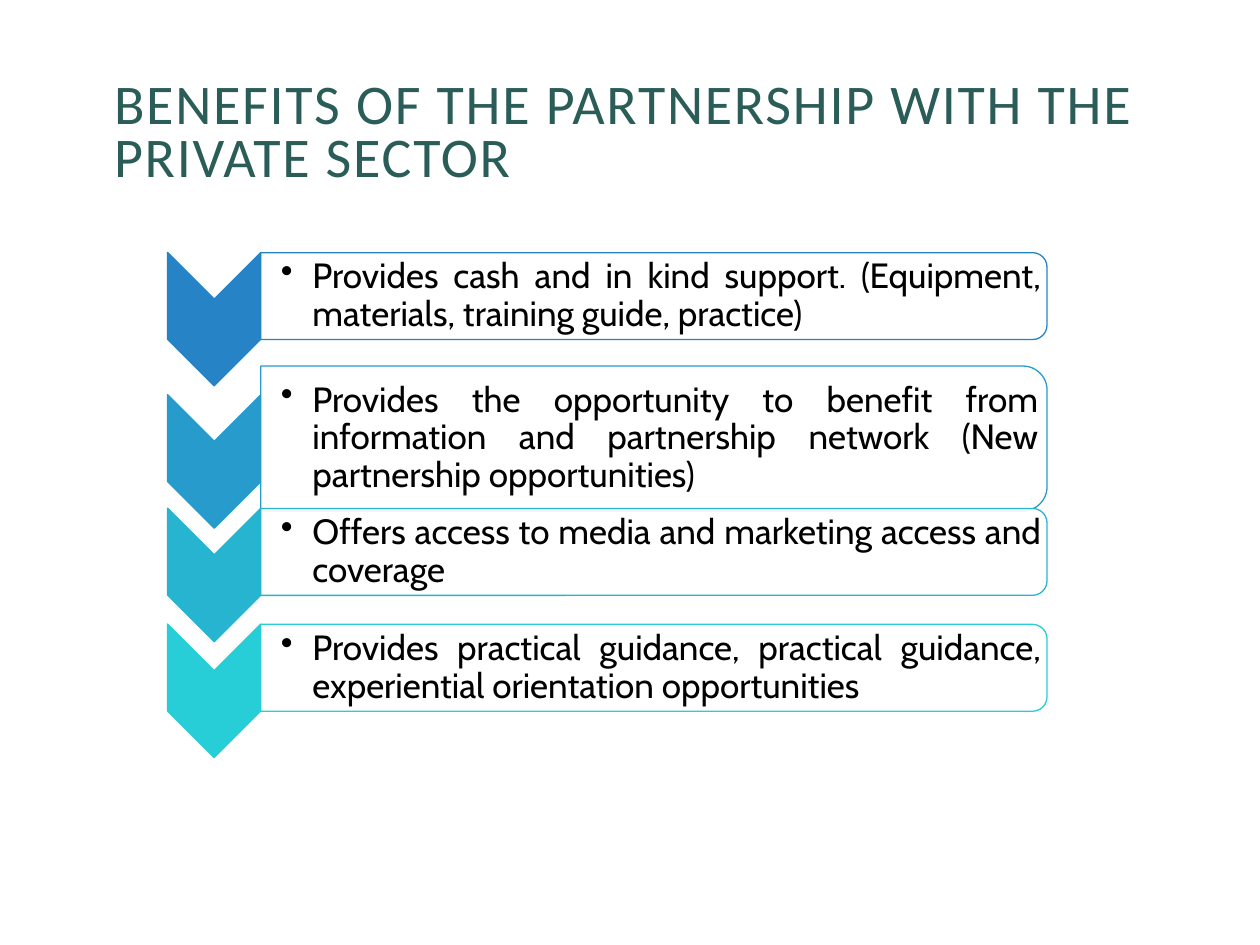
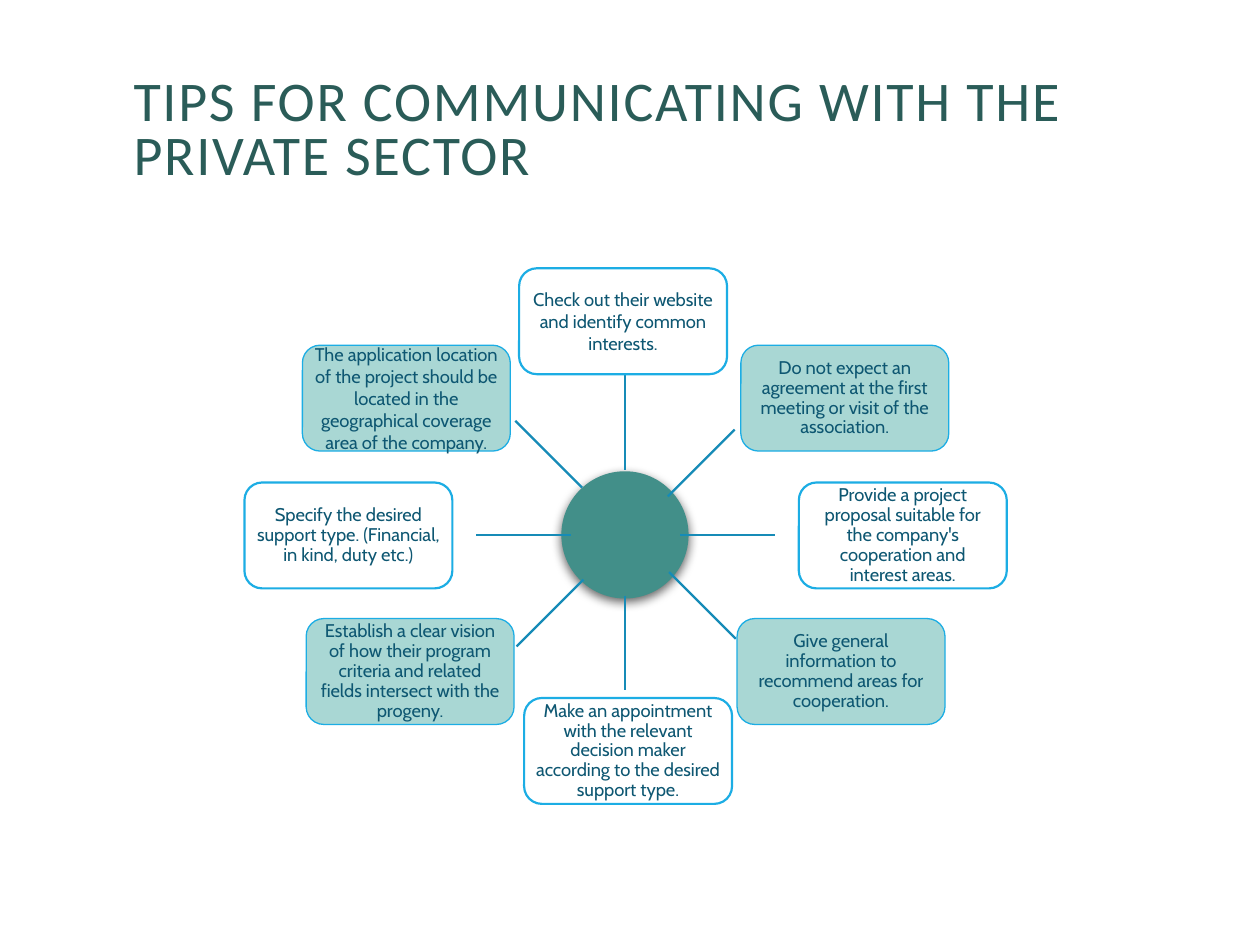
from dataclasses import dataclass
from math import cos, radians, sin

from lxml.etree import SubElement
from pptx import Presentation
from pptx.dml.color import RGBColor
from pptx.enum.shapes import MSO_CONNECTOR as Connector, MSO_SHAPE as Shape
from pptx.enum.text import MSO_ANCHOR as Anchor, MSO_AUTO_SIZE as AutoSize, PP_ALIGN as Align
from pptx.oxml.ns import qn
from pptx.util import Inches, Pt


@dataclass(frozen=True)
class Theme:
    """Colours, fonts and sizes that the slides share."""
    heading: str = "2A5C58"
    ink: str = "000000"
    paper: str = "FFFFFF"
    tip_ink: str = "0E5772"
    tip_tint: str = "A9D7D4"
    tip_edge: str = "1CADE4"
    spoke: str = "168BB7"
    hub: str = "428F89"
    heading_font: str = "Calibri"
    body_font: str = "Cabin"
    heading_size: float = 32
    benefit_size: float = 20
    tip_size: float = 10.5
    thin: float = 0.75
    thick: float = 1.25


@dataclass(frozen=True)
class Benefit:
    """One row of the benefits list, placed by its centre line."""
    text: str
    colour: str
    middle: float
    height: float = 6.9


@dataclass(frozen=True)
class Tip:
    """One box of the wheel and the spoke that points to it."""
    text: str
    left: float
    top: float
    angle: int
    start: tuple
    spacing: float = 0.9


THEME = Theme()
WIDTH, HEIGHT = Inches(10), Inches(7.5)
COLUMNS = 100
CELL = WIDTH / COLUMNS

CHEVRON_LEFT, CHEVRON_WIDTH, CHEVRON_HEIGHT, CHEVRON_DROP = 13.3, 7.4, 10.6, 1.83
BAR_LEFT, BAR_WIDTH, BAR_MARGIN = 20.7, 62.4, 0.05
TIP_WIDTH, TIP_HEIGHT = 16.5, 8.4
HUB_X, HUB_Y, HUB_RADIUS, SPOKE_LENGTH = 49.6, 42.45, 5.05, 7.5

BENEFITS = [
    Benefit("Provides cash and in kind support. (Equipment, materials, training guide, practice)",
            "2683C6", 23.5),
    Benefit("Provides the opportunity to benefit from information and partnership network "
            "(New partnership opportunities)", "269BCC", 34.8, 11.5),
    Benefit("Offers access to media and marketing access and coverage", "27B4D1", 43.8),
    Benefit("Provides practical guidance, practical guidance, experiential orientation "
            "opportunities", "27CED7", 53),
]

TIPS = [
    Tip("Check out their website and identify common interests.",
        41.2, 21.3, 270, (0, -5.15), 1),
    Tip("Do not expect an agreement at the first meeting or visit of the association.",
        58.8, 27.4, 315, (3.4, -3.05)),
    Tip("Provide a project proposal suitable for the company's cooperation and interest areas.",
        63.4, 38.3, 0, (4.4, 0)),
    Tip("Give general information to recommend areas for cooperation.",
        58.5, 49.1, 45, (3.5, 2.95)),
    Tip("Make an appointment with the relevant decision maker according to the desired "
        "support type.", 41.6, 55.4, 90, (0, 4.85)),
    Tip("Establish a clear vision of how their program criteria and related fields intersect "
        "with the progeny.", 24.3, 49.1, 135, (-3.3, 3.55)),
    Tip("Specify the desired support type. (Financial, in kind, duty etc.)",
        19.4, 38.3, 180, (-4.3, 0)),
    Tip("The application location of the project should be located in the geographical "
        "coverage area of the company.", 24, 27.4, 225, (-3.4, -3.75), 1),
]


def cells(*counts):
    """Turn counts of grid cells into lengths."""
    return [round(count * CELL) for count in counts]


def colour(code):
    """Turn a hex code into a colour."""
    return RGBColor.from_string(code)


def set_frame(frame, left, top, right, bottom):
    """Wrap the text, centre it vertically and set its insets in cells."""
    frame.word_wrap = True
    frame.auto_size = AutoSize.NONE
    frame.vertical_anchor = Anchor.MIDDLE
    (frame.margin_left, frame.margin_top,
     frame.margin_right, frame.margin_bottom) = cells(left, top, right, bottom)


def write(frame, text, font, size, ink, align, spacing):
    """Write one formatted paragraph and return it."""
    para = frame.paragraphs[0]
    para.text = text
    para.alignment = align
    para.line_spacing = spacing
    para.font.name = font
    para.font.size = Pt(size)
    para.font.color.rgb = colour(ink)
    return para


def add_page(deck, title, left, top, width, height, inset):
    """Add a page with the shared title style."""
    page = deck.slides.add_slide(deck.slide_layouts[5])
    heading = page.shapes.title
    heading.left, heading.top, heading.width, heading.height = cells(left, top, width, height)
    set_frame(heading.text_frame, inset, inset / 2, inset, inset / 2)
    para = write(heading.text_frame, title, THEME.heading_font, THEME.heading_size,
                 THEME.heading, Align.LEFT, 0.8)
    para.runs[0].font._element.set("spc", "100")
    return page


def add_block(page, kind, left, top, width, height, fill, edge=None, weight=THEME.thin):
    """Add a flat filled shape, outlined when an edge colour is given."""
    block = page.shapes.add_shape(kind, *cells(left, top, width, height))
    block.shadow.inherit = False
    block.fill.solid()
    block.fill.fore_color.rgb = colour(fill)
    if edge:
        block.line.color.rgb = colour(edge)
        block.line.width = Pt(weight)
    else:
        block.line.fill.background()
    return block


def add_turned(page, kind, left, top, width, height, fill, edge):
    """Add a shape turned a quarter that covers the given area."""
    shift = (width - height) / 2
    block = add_block(page, kind, left + shift, top - shift, height, width, fill, edge)
    block.rotation = 90
    return block


def set_alpha(colour_element, percent):
    """Set the opacity of a colour element."""
    SubElement(colour_element, qn("a:alpha")).set("val", str(percent * 1000))


def add_bullet(para, indent):
    """Give a paragraph a round bullet with a hanging indent in cells."""
    properties = para._p.get_or_add_pPr()
    hang, = cells(indent)
    properties.set("marL", str(hang))
    properties.set("indent", str(-hang))
    SubElement(properties, qn("a:buChar")).set("char", "•")


def add_benefit(page, benefit):
    """Add a chevron, its bar and the bulleted text."""
    middle, height = benefit.middle, benefit.height
    add_turned(page, Shape.CHEVRON, CHEVRON_LEFT, middle + CHEVRON_DROP - CHEVRON_HEIGHT / 2,
               CHEVRON_WIDTH, CHEVRON_HEIGHT, benefit.colour, benefit.colour)
    bar = add_turned(page, Shape.ROUND_2_SAME_RECTANGLE, BAR_LEFT, middle - height / 2,
                     BAR_WIDTH, height, THEME.paper, benefit.colour)
    set_alpha(bar._element.spPr.find(qn("a:solidFill"))[0], 90)
    margin = height * BAR_MARGIN
    box = page.shapes.add_textbox(*cells(BAR_LEFT, middle - height / 2 + margin,
                                         BAR_WIDTH - margin, height - 2 * margin))
    set_frame(box.text_frame, 1.6, 0.1, 0.1, 0.1)
    para = write(box.text_frame, benefit.text, THEME.body_font, THEME.benefit_size,
                 THEME.ink, Align.JUSTIFY, 0.9)
    add_bullet(para, 2.5)


def add_hub(page):
    """Add the circle in the middle of the wheel with its soft shadow."""
    hub = add_block(page, Shape.OVAL, HUB_X - HUB_RADIUS, HUB_Y - HUB_RADIUS,
                    2 * HUB_RADIUS, 2 * HUB_RADIUS, THEME.hub)
    effects = hub._element.spPr.find(qn("a:effectLst"))
    shadow = SubElement(effects, qn("a:outerShdw"), blurRad=str(Pt(6)), dist=str(Pt(2)),
                        dir="5400000", algn="ctr", rotWithShape="0")
    set_alpha(SubElement(shadow, qn("a:srgbClr"), val=THEME.ink), 60)


def add_spoke(page, tip):
    """Add the line that runs outwards from the hub to a tip."""
    start_x, start_y = HUB_X + tip.start[0], HUB_Y + tip.start[1]
    angle = radians(tip.angle)
    spoke = page.shapes.add_connector(Connector.STRAIGHT, *cells(
        start_x, start_y,
        start_x + SPOKE_LENGTH * cos(angle), start_y + SPOKE_LENGTH * sin(angle)))
    spoke.line.color.rgb = colour(THEME.spoke)
    spoke.line.width = Pt(THEME.thick)
    SubElement(spoke._element.spPr, qn("a:effectLst"))


def add_tip(page, tip):
    """Add a tip box, tinted when it stands on a diagonal."""
    diagonal = tip.angle % 90 != 0
    fill, weight = (THEME.tip_tint, THEME.thin) if diagonal else (THEME.paper, THEME.thick)
    box = add_block(page, Shape.ROUNDED_RECTANGLE, tip.left, tip.top, TIP_WIDTH, TIP_HEIGHT,
                    fill, THEME.tip_edge, weight)
    set_frame(box.text_frame, 0.5, 0.5, 0.5, 0.5)
    write(box.text_frame, tip.text, THEME.body_font, THEME.tip_size, THEME.tip_ink,
          Align.CENTER, tip.spacing)


def main():
    """Build both pages and save the deck."""
    deck = Presentation()
    deck.slide_width, deck.slide_height = WIDTH, HEIGHT

    page = add_page(deck, "BENEFITS OF THE PARTNERSHIP WITH THE PRIVATE SECTOR",
                    8.3, 2.5, 83.3, 16.4, 0.75)
    for benefit in BENEFITS:
        add_benefit(page, benefit)

    page = add_page(deck, "TIPS FOR COMMUNICATING WITH THE PRIVATE SECTOR",
                    9.6, 2.3, 79.7, 16.4, 1)
    add_hub(page)
    for tip in TIPS:
        add_spoke(page, tip)
        add_tip(page, tip)

    deck.save("out.pptx")


if __name__ == "__main__":
    main()
